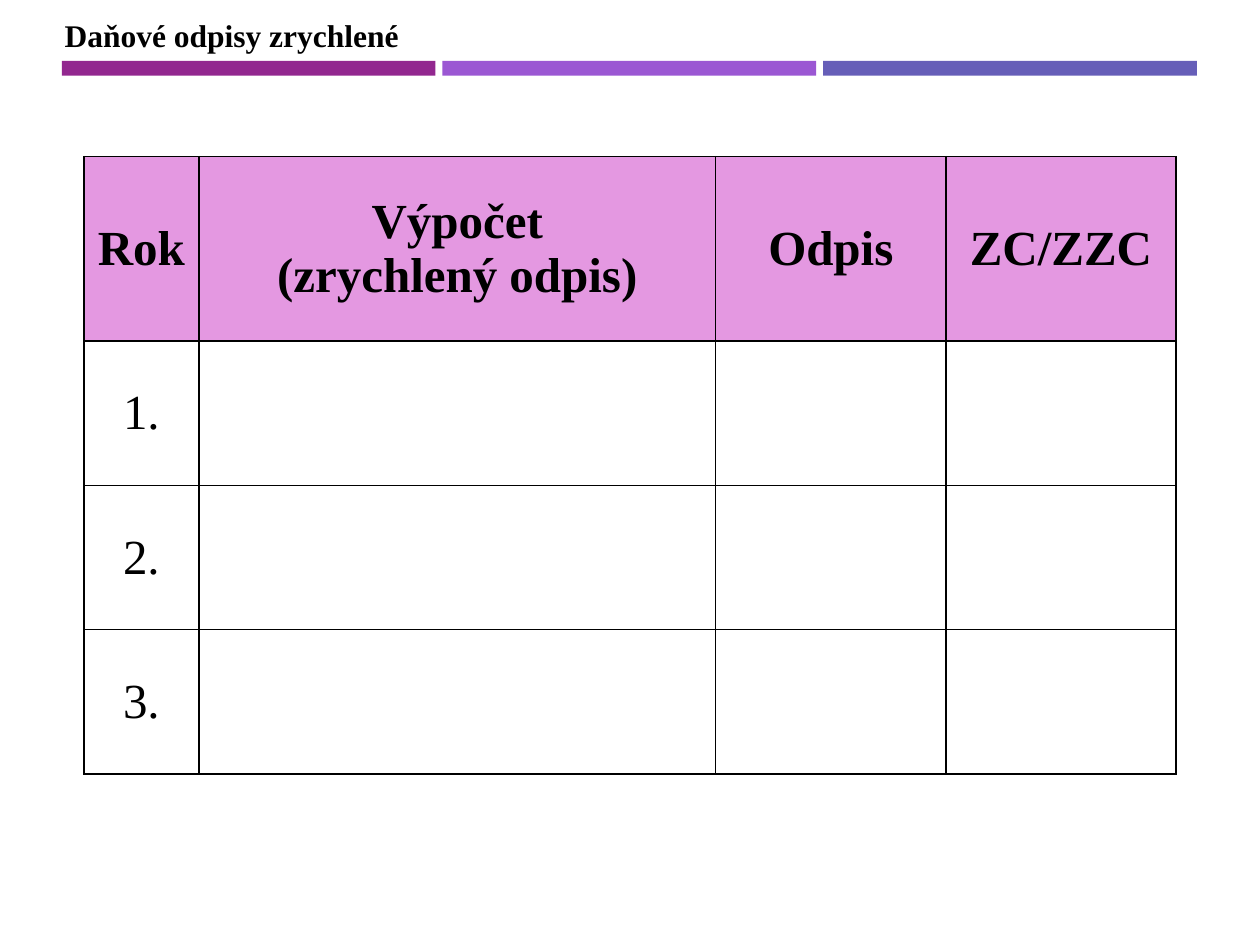
from dataclasses import dataclass

from lxml import etree
from pptx import Presentation
from pptx.dml.color import RGBColor
from pptx.enum.shapes import MSO_SHAPE
from pptx.enum.text import MSO_ANCHOR, MSO_AUTO_SIZE, PP_ALIGN
from pptx.oxml.ns import qn
from pptx.util import Pt

RECTANGLE = MSO_SHAPE.RECTANGLE
MIDDLE = MSO_ANCHOR.MIDDLE
FIT_SHAPE = MSO_AUTO_SIZE.SHAPE_TO_FIT_TEXT
LEFT, CENTER = PP_ALIGN.LEFT, PP_ALIGN.CENTER
TITLE_ONLY = 5


@dataclass(frozen=True)
class Theme:
    font: str = "Times New Roman"
    text: str = "000000"
    border: str = "000000"
    header: str = "E498E1"
    bars: tuple = ("92278F", "9B57D3", "665EB8")
    title_size: int = 18
    table_size: int = 28


theme = Theme()


def style_text(paragraph, size, bold, alignment):
    paragraph.alignment = alignment
    paragraph.font.name = theme.font
    paragraph.font.size = Pt(size)
    paragraph.font.bold = bold
    paragraph.font.color.rgb = RGBColor.from_string(theme.text)


def add_borders(cell, width):
    """Draw all four cell borders; they must precede the cell's fill in the XML."""
    properties = cell._tc.get_or_add_tcPr()
    for position, side in enumerate(("a:lnL", "a:lnR", "a:lnT", "a:lnB")):
        line = etree.Element(qn(side), w=str(Pt(width)))
        fill = etree.SubElement(line, qn("a:solidFill"))
        etree.SubElement(fill, qn("a:srgbClr"), val=theme.border)
        properties.insert(position, line)


presentation = Presentation()
presentation.slide_width = Pt(720)
presentation.slide_height = Pt(540)
slide = presentation.slides.add_slide(presentation.slide_layouts[TITLE_ONLY])

# Three coloured bars under the title
bar_width, bar_gap = 213.6, 3.9
for index, color in enumerate(theme.bars):
    bar_left = 35.3 + index * (bar_width + bar_gap)
    bar = slide.shapes.add_shape(RECTANGLE, Pt(bar_left), Pt(34.8), Pt(bar_width), Pt(8.4))
    bar.shadow.inherit = False
    bar.fill.solid()
    bar.fill.fore_color.rgb = RGBColor.from_string(color)
    bar.line.fill.background()

# Title
title = slide.shapes.title
title.left, title.top, title.width, title.height = Pt(29.7), Pt(5.2), Pt(207.4), Pt(29)
title.text_frame.text = "Daňové odpisy zrychlené"
title.text_frame.word_wrap = False
title.text_frame.auto_size = FIT_SHAPE
title.text_frame.vertical_anchor = MIDDLE
style_text(title.text_frame.paragraphs[0], theme.title_size, True, LEFT)

# Depreciation table
headers = ("Rok", "Výpočet\n(zrychlený odpis)", "Odpis", "ZC/ZZC")
years = ("1.", "2.", "3.")
rows = [headers] + [(year, "", "", "") for year in years]
column_widths = (65.6, 295.4, 131.5, 131.5)
row_heights = (105.4,) + (82.5,) * len(years)

table = slide.shapes.add_table(
    len(rows), len(headers), Pt(48), Pt(89.5), Pt(sum(column_widths)), Pt(sum(row_heights))
).table
for column, width in zip(table.columns, column_widths):
    column.width = Pt(width)
for row, height in zip(table.rows, row_heights):
    row.height = Pt(height)

for row_index, row_texts in enumerate(rows):
    is_header = row_index == 0
    for column_index, text in enumerate(row_texts):
        cell = table.cell(row_index, column_index)
        cell.text = text
        cell.vertical_anchor = MIDDLE
        cell.margin_left = cell.margin_right = Pt(5)
        cell.margin_top = cell.margin_bottom = Pt(0)
        for paragraph in cell.text_frame.paragraphs:
            style_text(paragraph, theme.table_size, is_header, CENTER)
        if is_header:
            cell.fill.solid()
            cell.fill.fore_color.rgb = RGBColor.from_string(theme.header)
        else:
            cell.fill.background()
        add_borders(cell, 1)

presentation.save("out.pptx")
